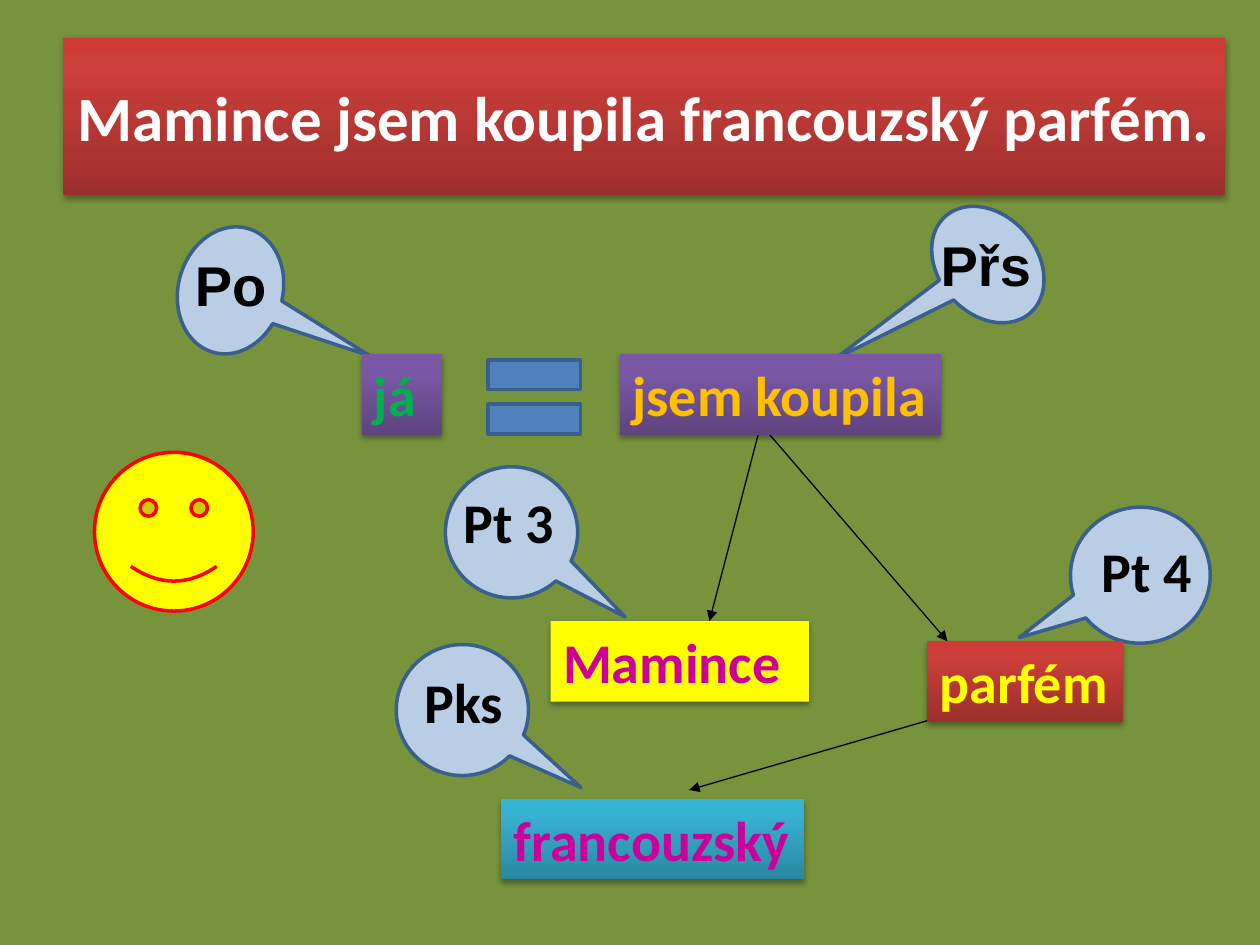
from copy import deepcopy
from dataclasses import dataclass

from lxml import etree
from pptx import Presentation
from pptx.dml.color import RGBColor
from pptx.enum.shapes import MSO_CONNECTOR, MSO_SHAPE
from pptx.enum.text import MSO_ANCHOR, PP_ALIGN
from pptx.oxml.ns import qn
from pptx.util import Inches, Pt

RECTANGLE = MSO_SHAPE.RECTANGLE
CALLOUT = MSO_SHAPE.OVAL_CALLOUT
EQUALS = MSO_SHAPE.MATH_EQUAL
SMILEY = MSO_SHAPE.SMILEY_FACE
STRAIGHT = MSO_CONNECTOR.STRAIGHT
MIDDLE = MSO_ANCHOR.MIDDLE
TOP = MSO_ANCHOR.TOP
LEFT = PP_ALIGN.LEFT
CENTER = PP_ALIGN.CENTER


@dataclass(frozen=True)
class Theme:
    background: str = "77933C"
    bubble: str = "B9CDE5"
    outline: str = "3A5F8C"
    blue: str = "4F81BD"
    black: str = "000000"
    white: str = "FFFFFF"
    yellow: str = "FFFF00"
    red_line: str = "FF0000"
    green: str = "00B050"
    amber: str = "FFC000"
    magenta: str = "CC0099"
    red: tuple = ("9C2F2D", "CB3E3A", "CE3B37")
    purple: tuple = ("5F4480", "7B58A6", "7C57A8")
    teal: tuple = ("2A88A2", "37B1D2", "34B4D6")
    title_size: int = 36
    word_size: int = 32
    word_font: str = "Calibri"
    label_font: str = "Arial"
    outline_width: float = 2
    arrow_width: float = 0.75
    word_height: float = 0.64


def apply(target, values):
    for name, value in values.items():
        setattr(target, name, value)


class SentenceDiagram:
    def __init__(self, slide, theme):
        self.slide = slide
        self.theme = theme
        background = slide.background.fill
        background.solid()
        background.fore_color.rgb = RGBColor.from_string(theme.background)

    def add_text(self, shape, text, color, **options):
        theme = self.theme
        frame = shape.text_frame
        apply(frame, {"word_wrap": False,
                      "vertical_anchor": options.get("anchor", TOP)})
        paragraph = frame.paragraphs[0]
        paragraph.alignment = options.get("align", LEFT)
        run = paragraph.add_run()
        run.text = text
        apply(run.font, {"name": options.get("font", theme.word_font),
                         "size": Pt(options.get("size", theme.word_size)),
                         "bold": True})
        run.font.color.rgb = RGBColor.from_string(color)

    def shape(self, kind, bounds, fill, line=None):
        shape = self.slide.shapes.add_shape(kind, *map(Inches, bounds))
        shape.shadow.inherit = False
        if isinstance(fill, tuple):
            self.gradient(shape, fill)
        else:
            shape.fill.solid()
            shape.fill.fore_color.rgb = RGBColor.from_string(fill)
        if line:
            shape.line.color.rgb = RGBColor.from_string(line)
            shape.line.width = Pt(self.theme.outline_width)
        else:
            shape.line.fill.background()
        return shape

    def gradient(self, shape, colors):
        shape.fill.gradient()
        shape.fill.gradient_angle = 90
        stop_list = next(shape._element.spPr.iter(qn("a:gsLst")))
        stop_list.insert(1, deepcopy(stop_list[0]))
        stops = zip(shape.fill.gradient_stops, (0, 0.8, 1), colors)
        for stop, position, color in stops:
            stop.position = position
            stop.color.rgb = RGBColor.from_string(color)

    def shadow(self, shape):
        effects = shape._element.spPr.find(qn("a:effectLst"))
        outer = etree.SubElement(effects, qn("a:outerShdw"), blurRad="40000",
                                 dist="23000", dir="5400000", rotWithShape="0")
        color = etree.SubElement(outer, qn("a:srgbClr"), val=self.theme.black)
        etree.SubElement(color, qn("a:alpha"), val="35000")

    def box(self, text, bounds, fill, color, **options):
        shape = self.shape(RECTANGLE, bounds, fill)
        self.shadow(shape)
        self.add_text(shape, text, color, **options)

    def word(self, text, left, top, width, fill, color):
        bounds = (left, top, width, self.theme.word_height)
        self.box(text, bounds, fill, color)

    def callout(self, bounds, rotation, tip, flipped=False):
        shape = self.shape(CALLOUT, bounds, self.theme.bubble, self.theme.outline)
        shape.rotation = rotation
        for index, value in enumerate(tip):
            shape.adjustments[index] = value
        if flipped:
            shape._element.spPr.xfrm.set("flipH", "1")

    def label(self, text, left, top, width, **options):
        bounds = (left, top, width, self.theme.word_height)
        shape = self.slide.shapes.add_textbox(*map(Inches, bounds))
        self.add_text(shape, text, self.theme.black, **options)

    def arrow(self, start, end):
        connector = self.slide.shapes.add_connector(
            STRAIGHT, *map(Inches, start + end))
        connector.line.color.rgb = RGBColor.from_string(self.theme.black)
        connector.line.width = Pt(self.theme.arrow_width)
        properties = connector._element.spPr
        etree.SubElement(properties.find(qn("a:ln")), qn("a:tailEnd"),
                         type="triangle")
        etree.SubElement(properties, qn("a:effectLst"))


def main():
    presentation = Presentation()
    apply(presentation, {"slide_width": Inches(10), "slide_height": Inches(7.5)})
    slide = presentation.slides.add_slide(presentation.slide_layouts[6])
    theme = Theme()
    diagram = SentenceDiagram(slide, theme)

    diagram.box("Mamince jsem koupila francouzský parfém.",
                (0.5, 0.3, 9.22, 1.25), theme.red, theme.white,
                size=theme.title_size, anchor=MIDDLE, align=CENTER)

    side_tip = (-0.646, 0.859)
    for callout in (
        ((1.32, 1.89, 1.02, 0.83), 285.5, (-0.201, 1.451)),
        ((7.33, 1.71, 1.02, 0.78), 48.9, (-0.228, 1.798)),
        ((3.54, 3.7, 1.04, 1.05), 270, side_tip),
        ((3.15, 5.11, 1.04, 1.05), 266.5, side_tip),
        ((8.51, 4.01, 1.08, 1.11), 266.5, (0.404, -0.892), True),
    ):
        diagram.callout(*callout)

    for text, left, top, width in (("Po", 1.44, 1.94, 0.78),
                                   ("Přs", 7.36, 1.78, 0.93)):
        diagram.label(text, left, top, width,
                      font=theme.label_font, align=CENTER)
    for text, left, top, width in (("Pt 3", 3.58, 3.82, 0.93),
                                   ("Pks", 3.27, 5.25, 0.83),
                                   ("Pt 4", 8.64, 4.21, 0.93)):
        diagram.label(text, left, top, width)

    for start, end in (((6.02, 3.44), (5.63, 4.93)),
                       ((6.1, 3.44), (7.52, 5.09)),
                       ((7.36, 5.72), (5.47, 6.27))):
        diagram.arrow(start, end)

    for word in (
        ("já", 2.87, 2.81, 0.64, theme.purple, theme.green),
        ("jsem koupila", 4.92, 2.81, 2.55, theme.purple, theme.amber),
        ("Mamince", 4.37, 4.93, 2.05, theme.yellow, theme.magenta),
        ("parfém", 7.36, 5.09, 1.55, theme.red, theme.yellow),
        ("francouzský", 3.98, 6.34, 2.4, theme.teal, theme.magenta),
    ):
        diagram.word(*word)

    diagram.shape(EQUALS, (3.74, 2.65, 1, 1), theme.blue, theme.outline)
    diagram.shape(SMILEY, (0.75, 3.59, 1.26, 1.26), theme.yellow, theme.red_line)
    presentation.save("out.pptx")


if __name__ == "__main__":
    main()
